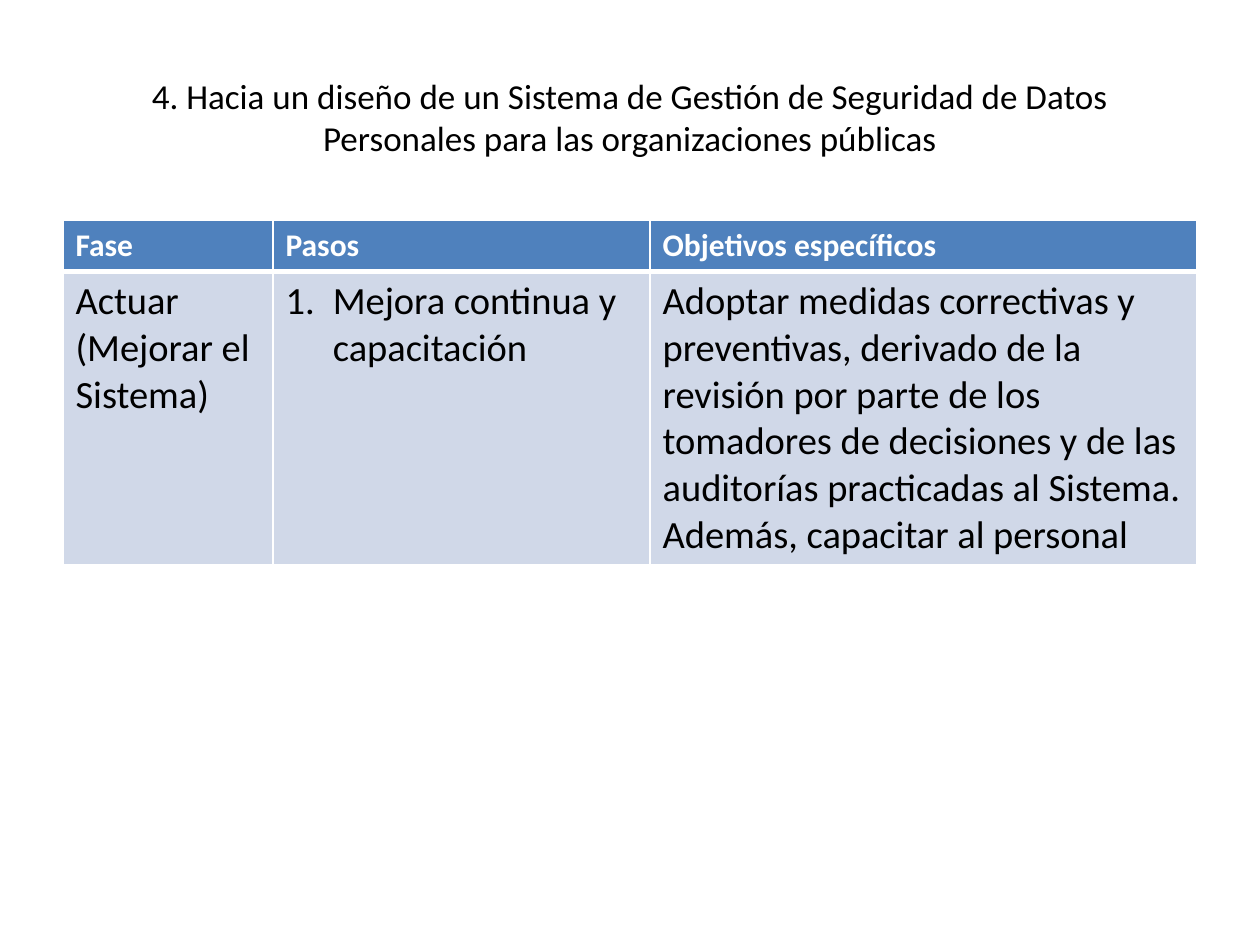
"""Builds the slide on the improvement phase of a data security system."""
import lxml.etree
import pptx
import pptx.dml.color
import pptx.enum.text
import pptx.oxml.ns
import pptx.util

Pt = pptx.util.Pt
qn = pptx.oxml.ns.qn
ALIGN = pptx.enum.text.PP_ALIGN
ANCHOR = pptx.enum.text.MSO_ANCHOR


def color(value):
    """Return the colour of a hex string."""
    return pptx.dml.color.RGBColor.from_string(value)


def write(frame, text, font="Calibri", size=22, ink="000000", bold=False, align=ALIGN.LEFT):
    """Put formatted text in a frame and return its paragraph."""
    frame.word_wrap = True
    paragraph = frame.paragraphs[0]
    paragraph.alignment = align
    run = paragraph.add_run()
    run.text = text
    run.font.name = font
    run.font.size = Pt(size)
    run.font.bold = bold
    run.font.color.rgb = color(ink)
    return paragraph


def number(paragraph, indent=27):
    """Give a paragraph an automatic number with a hanging indent."""
    properties = paragraph._p.get_or_add_pPr()
    properties.set("marL", str(Pt(indent)))
    properties.set("indent", str(-Pt(indent)))
    lxml.etree.SubElement(properties, qn("a:buFont"), typeface="+mj-lt")
    lxml.etree.SubElement(properties, qn("a:buAutoNum"), type="arabicPeriod")


class SlideBuilder:
    """Holds the style and the current slide."""

    header_fill = "4F81BD"
    body_fill = "D0D8E8"
    white = "FFFFFF"

    def __init__(self, presentation):
        """Add a title-only slide."""
        self.slide = presentation.slides.add_slide(presentation.slide_layouts[5])

    def title(self, text, left, top, width, height):
        """Place and fill the title."""
        shape = self.slide.shapes.title
        shape.left, shape.top, shape.width, shape.height = map(Pt, (left, top, width, height))
        shape.text_frame.vertical_anchor = ANCHOR.MIDDLE
        write(shape.text_frame, text, size=20, align=ALIGN.CENTER)

    def borders(self, cell, **widths):
        """Draw white cell borders of the given widths."""
        properties = cell._tc.get_or_add_tcPr()
        for position, (side, width) in enumerate(widths.items()):
            line = lxml.etree.Element(qn(f"a:ln{side}"), w=str(Pt(width)))
            fill = lxml.etree.SubElement(line, qn("a:solidFill"))
            lxml.etree.SubElement(fill, qn("a:srgbClr"), val=self.white)
            properties.insert(position, line)

    def table(self, rows, left, top, widths, heights, numbered):
        """Add a table with a header row and numbered cells."""
        frame = self.slide.shapes.add_table(
            len(rows), len(widths), Pt(left), Pt(top), Pt(sum(widths)), Pt(sum(heights)))
        table = frame.table
        for column, width in zip(table.columns, widths):
            column.width = Pt(width)
        for row_index, (texts, height) in enumerate(zip(rows, heights)):
            table.rows[row_index].height = Pt(height)
            header = row_index == 0
            for column_index, text in enumerate(texts):
                cell = table.cell(row_index, column_index)
                cell.fill.solid()
                cell.fill.fore_color.rgb = color(self.header_fill if header else self.body_fill)
                style = dict(size=18, ink=self.white, bold=True) if header else {}
                paragraph = write(cell.text_frame, text, **style)
                if (row_index, column_index) in numbered:
                    number(paragraph)
                self.borders(cell, L=1, R=1, T=1 if header else 3, B=3 if header else 1)


def main():
    """Build and save the presentation."""
    presentation = pptx.Presentation()
    presentation.slide_width, presentation.slide_height = Pt(720), Pt(540)
    builder = SlideBuilder(presentation)
    builder.title(
        "4. Hacia un diseño de un Sistema de Gestión de Seguridad de Datos "
        "Personales para las organizaciones públicas", 36, 21.6, 648, 90)
    rows = [
        ("Fase", "Pasos", "Objetivos específicos"),
        ("Actuar (Mejorar el Sistema)",
         "Mejora continua y capacitación",
         "Adoptar medidas correctivas y preventivas, derivado de la revisión por parte "
         "de los tomadores de decisiones y de las auditorías practicadas al Sistema. "
         "Además, capacitar al personal"),
    ]
    builder.table(rows, 36, 126, widths=(120, 215.5, 312.5), heights=(29.2, 165.9),
                  numbered={(1, 1)})
    presentation.save("out.pptx")


if __name__ == "__main__":
    main()
